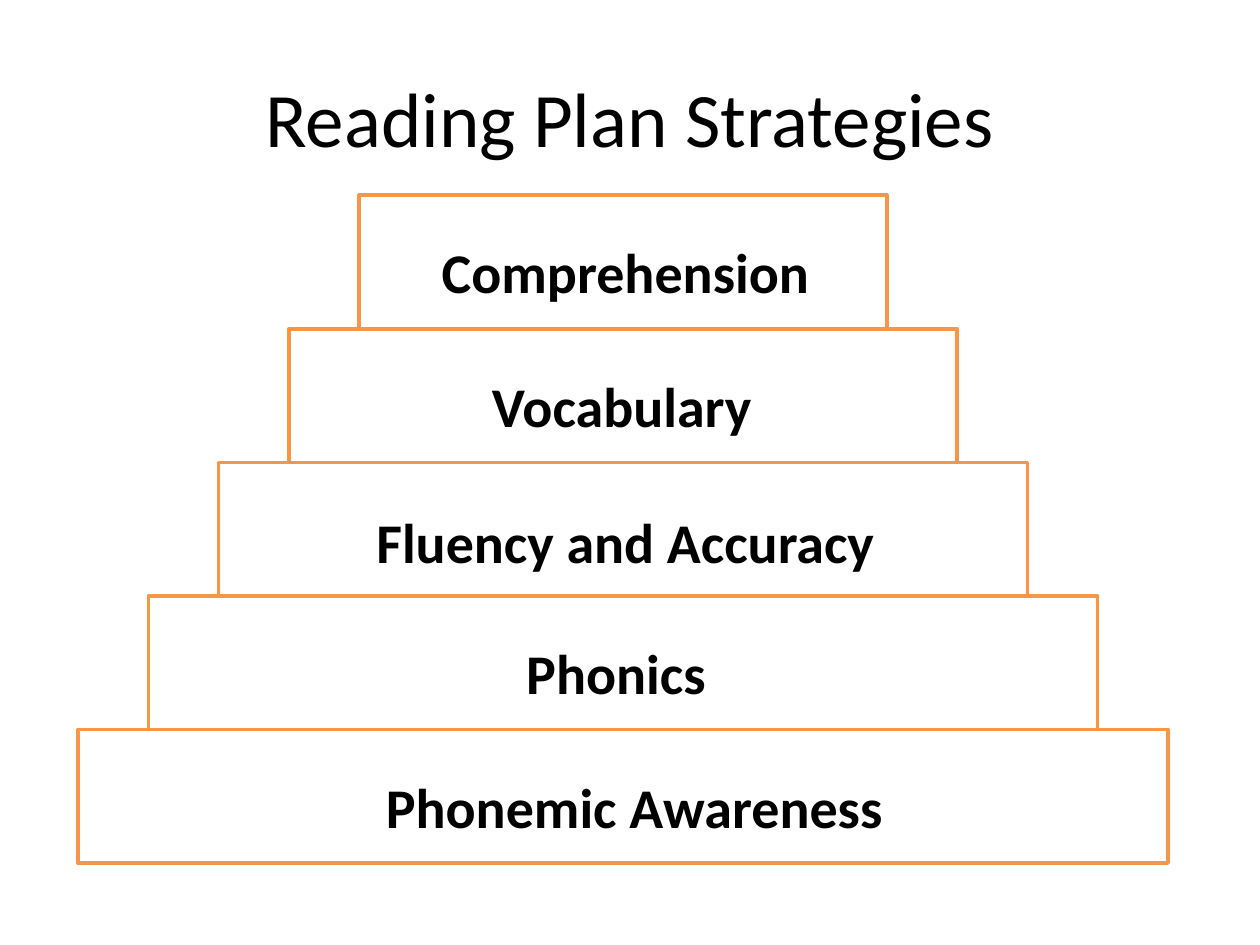
from dataclasses import dataclass

from pptx import Presentation
from pptx.dml.color import RGBColor
from pptx.enum.shapes import MSO_SHAPE
from pptx.enum.text import MSO_ANCHOR, MSO_AUTO_SIZE, PP_ALIGN
from pptx.util import Inches, Pt

RECTANGLE = MSO_SHAPE.RECTANGLE
MIDDLE = MSO_ANCHOR.MIDDLE
GROW = MSO_AUTO_SIZE.SHAPE_TO_FIT_TEXT
CENTER = PP_ALIGN.CENTER


@dataclass(frozen=True)
class Theme:
    font: str = "Calibri"
    text: RGBColor = RGBColor(0x00, 0x00, 0x00)
    fill: RGBColor = RGBColor(0xFF, 0xFF, 0xFF)
    outline: RGBColor = RGBColor(0xF7, 0x96, 0x46)
    outline_width: Pt = Pt(2)
    title_size: Pt = Pt(44)
    label_size: Pt = Pt(32)


THEME = Theme()

# Steps run from the base of the pyramid to its top.
BASE_LEFT, BASE_TOP, BASE_WIDTH = 0.62, 5.79, 8.65
STEP_HEIGHT = 1.06
STEP_INSET = (2.85 - BASE_LEFT) / 4

# Text, left, top, width, height
LABELS = [
    ("Phonemic Awareness", 2.69, 6, 4.69, 0.78),
    ("Phonics ", 2.9, 4.94, 4.08, 0.74),
    ("Fluency and Accuracy", 2.69, 3.9, 4.55, 0.78),
    ("Vocabulary", 2.89, 2.82, 4.09, 0.74),
    ("Comprehension", 2.97, 1.76, 3.99, 0.74),
]


def add_text(shapes, text, left, top, width, height, size, bold=False):
    """Add a wrapped box with one centred line and return its text frame."""
    sp = shapes.add_textbox(Inches(left), Inches(top), Inches(width), Inches(height))
    tf = sp.text_frame
    tf.word_wrap = True
    p = tf.paragraphs[0]
    p.alignment = CENTER
    r = p.add_run()
    r.text = text
    r.font.name = THEME.font
    r.font.size = size
    r.font.bold = bold
    r.font.color.rgb = THEME.text
    return tf


def add_title(s, text):
    tf = add_text(s.shapes, text, 0.5, 0.3, 9, 1.25, THEME.title_size)
    tf.vertical_anchor = MIDDLE
    tf.margin_left = tf.margin_right = Inches(0.05)


def add_step(shapes, level):
    inset = level * STEP_INSET
    sp = shapes.add_shape(
        RECTANGLE,
        Inches(BASE_LEFT + inset),
        Inches(BASE_TOP - level * STEP_HEIGHT),
        Inches(BASE_WIDTH - 2 * inset),
        Inches(STEP_HEIGHT),
    )
    sp.shadow.inherit = False
    sp.fill.solid()
    sp.fill.fore_color.rgb = THEME.fill
    sp.line.color.rgb = THEME.outline
    sp.line.width = THEME.outline_width


def add_label(shapes, text, left, top, width, height):
    tf = add_text(shapes, text, left, top, width, height, THEME.label_size, bold=True)
    tf.auto_size = GROW
    tf.paragraphs[0].line_spacing = 1.15


def main():
    prs = Presentation()
    prs.slide_width, prs.slide_height = Inches(10), Inches(7.5)
    s = prs.slides.add_slide(prs.slide_layouts[6])
    add_title(s, "Reading Plan Strategies")
    pyramid = s.shapes.add_group_shape()
    for level in range(len(LABELS)):
        add_step(pyramid.shapes, level)
    for label in LABELS:
        add_label(pyramid.shapes, *label)
    prs.save("out.pptx")


if __name__ == "__main__":
    main()
